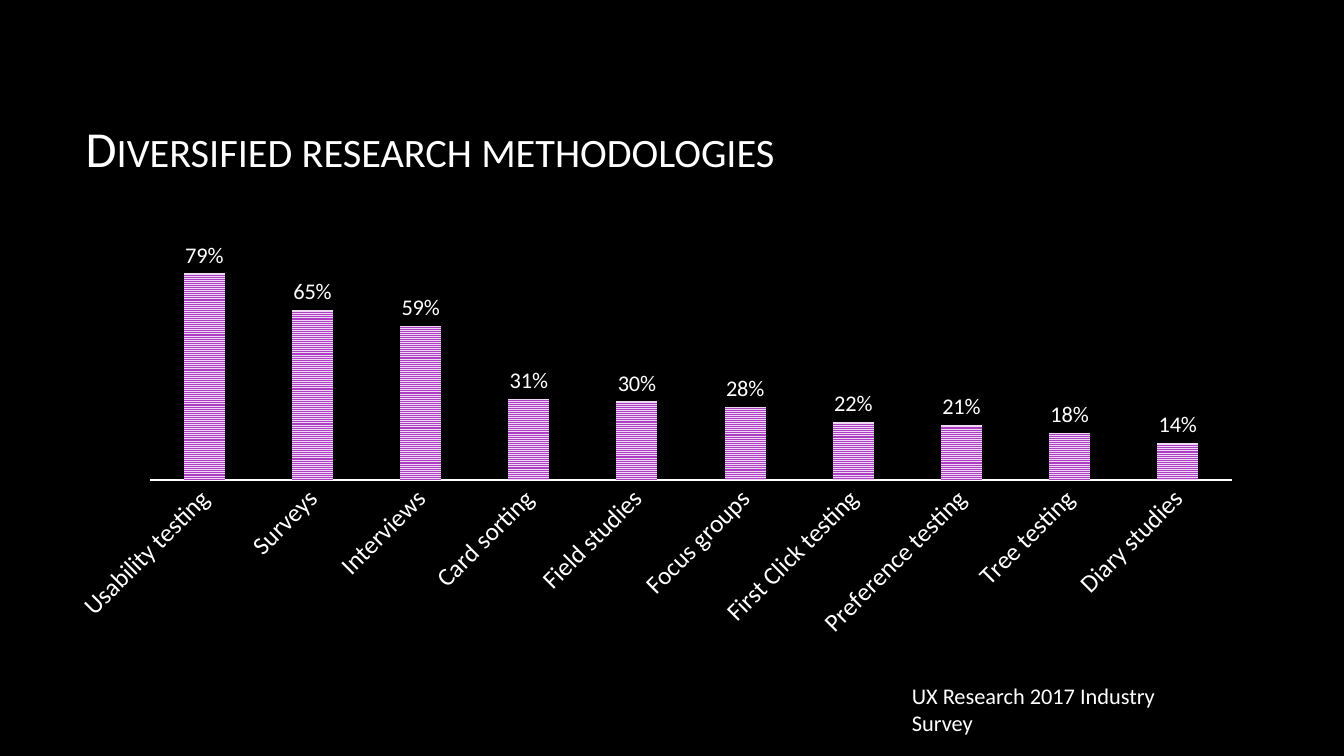
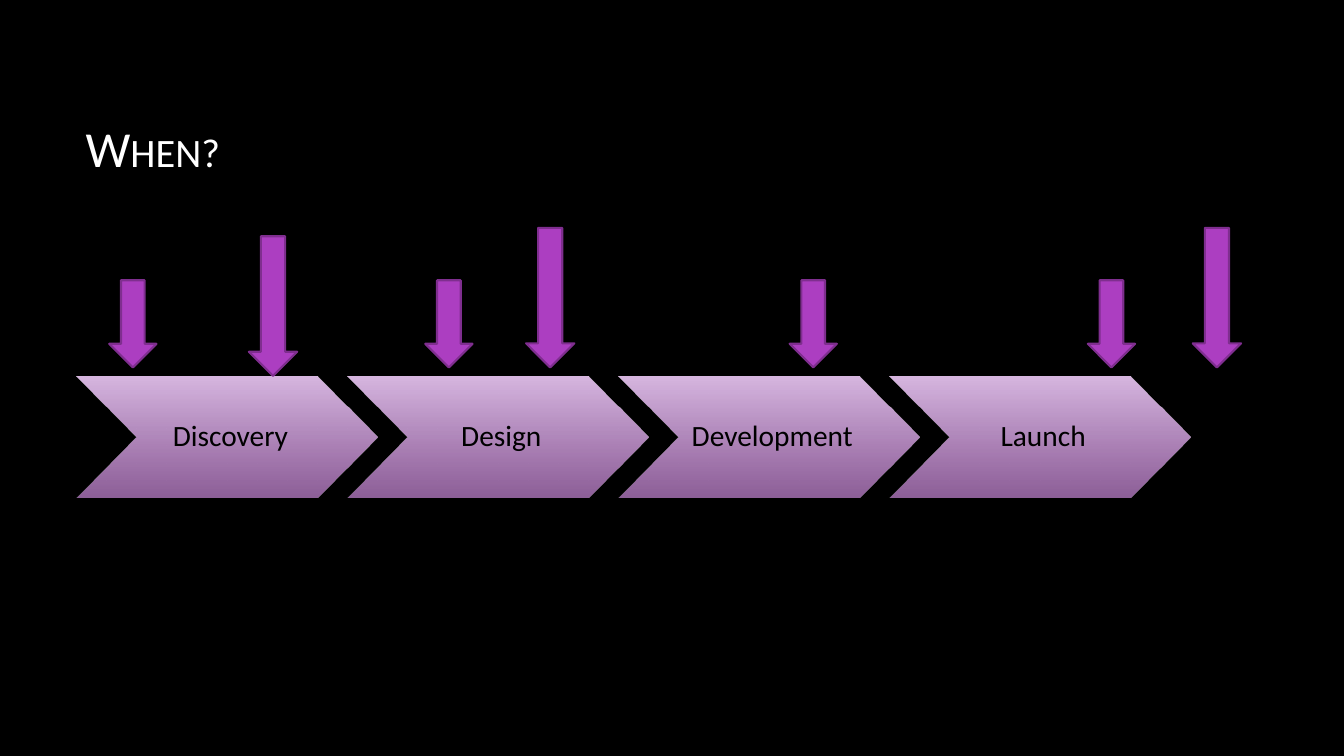
from lxml import etree
from pptx import Presentation, util as u
from pptx.chart.data import CategoryChartData
from pptx.dml.color import RGBColor
from pptx.enum import chart as ch, dml, shapes, text
from pptx.oxml.ns import qn

PX = 9525  # EMU per px: the slide is 1280 x 720 px
BLACK, WHITE = "000000", "FFFFFF"
PURPLE, DARK_PURPLE, PALE_PURPLE = "AC3EC1", "7F2E8F", "EED8F3"
CHEVRON_TOP, CHEVRON_BOTTOM = "D8B7E1", "BF82CE"
FONT = "Calibri"
TITLE_BOX = (72, 64, 1064, 153)

METHODS = {
    "Usability testing": 0.79, "Surveys": 0.65, "Interviews": 0.59,
    "Card sorting": 0.31, "Field studies": 0.3, "Focus groups": 0.28,
    "First Click testing": 0.22, "Preference testing": 0.21,
    "Tree testing": 0.18, "Diary studies": 0.14,
}
PHASES = ["Discovery", "Design", "Development", "Launch"]
SHORT_ARROW, TALL_ARROW = (45, 83), (46, 133)
# left edge, tip height, size
ARROWS = [
    (104, 350, SHORT_ARROW), (405, 350, SHORT_ARROW),
    (1036, 350, SHORT_ARROW), (752, 350, SHORT_ARROW),
    (501, 350, TALL_ARROW), (237, 358, TALL_ARROW), (1136, 350, TALL_ARROW),
]


def px(*lengths):
    return [u.Emu(round(length * PX)) for length in lengths]


def rgb(value):
    return RGBColor.from_string(value)


def assign(target, **values):
    for name, value in values.items():
        setattr(target, name, value)


def style_font(font, size, color=WHITE):
    assign(font, name=FONT, size=u.Pt(size))
    font.color.rgb = rgb(color)


def add_titled_slide(prs, heading):
    slide = prs.slides.add_slide(prs.slide_layouts[5])
    title = slide.shapes.title
    left, top, width, height = px(*TITLE_BOX)
    assign(title, left=left, top=top, width=width, height=height)
    assign(title.text_frame, text=heading, word_wrap=True,
           vertical_anchor=text.MSO_ANCHOR.MIDDLE,
           auto_size=text.MSO_AUTO_SIZE.NONE)
    paragraph = title.text_frame.paragraphs[0]
    paragraph.alignment = text.PP_ALIGN.LEFT
    run = paragraph.runs[0]
    style_font(run.font, 36)
    run._r.get_or_add_rPr().set("cap", "small")
    return slide


def add_methods_chart(slide, box):
    data = CategoryChartData(number_format="0%")
    data.categories = list(METHODS)
    data.add_series("Series 1", list(METHODS.values()))
    chart = slide.shapes.add_chart(
        ch.XL_CHART_TYPE.COLUMN_CLUSTERED, *px(*box), data).chart
    assign(chart, has_title=False, has_legend=False)
    style_font(chart.font, 10)

    assign(chart.value_axis, visible=False, minimum_scale=0, maximum_scale=1,
           has_major_gridlines=False)
    methods = chart.category_axis
    assign(methods, major_tick_mark=ch.XL_TICK_MARK.NONE,
           minor_tick_mark=ch.XL_TICK_MARK.NONE, has_major_gridlines=False)
    style_font(methods.tick_labels.font, 18)
    label_body = methods._element.find(qn("c:txPr")).find(qn("a:bodyPr"))
    label_body.set("rot", "-2700000")
    label_body.set("vert", "horz")
    methods.format.line.color.rgb = rgb(WHITE)
    methods.format.line.width = u.Pt(1.5)

    plot = chart.plots[0]
    assign(plot, gap_width=164, overlap=-22, vary_by_categories=False,
           has_data_labels=True)
    assign(plot.data_labels, show_value=True, number_format="0%",
           number_format_is_linked=False,
           position=ch.XL_LABEL_POSITION.OUTSIDE_END)
    style_font(plot.data_labels.font, 16)
    fill = plot.series[0].format.fill
    fill.patterned()
    fill.pattern = dml.MSO_PATTERN.NARROW_HORIZONTAL
    fill.fore_color.rgb = rgb(PURPLE)
    fill.back_color.rgb = rgb(PALE_PURPLE)


def add_survey_source(slide, box, wording):
    frame = slide.shapes.add_textbox(*px(*box)).text_frame
    assign(frame, text=wording, word_wrap=False,
           auto_size=text.MSO_AUTO_SIZE.SHAPE_TO_FIT_TEXT)
    style_font(frame.paragraphs[0].runs[0].font, 16)


def fill_chevron(chevron):
    """Fade downwards from a solid pale purple to a translucent darker one."""
    chevron.fill.gradient()
    chevron.fill.gradient_angle = 270
    for stop, color in zip(chevron.fill.gradient_stops,
                           (CHEVRON_TOP, CHEVRON_BOTTOM)):
        stop.color.rgb = rgb(color)
    bottom = chevron._element.spPr.findall(".//" + qn("a:srgbClr"))[-1]
    etree.SubElement(bottom, qn("a:alpha")).set("val", "74000")
    chevron.line.fill.background()


def add_phase_chain(slide, box, pitch):
    """Place one chevron per phase; box is the first chevron."""
    left, top, width, height = box
    chain = slide.shapes.add_group_shape()
    for index, phase in enumerate(PHASES):
        chevron = chain.shapes.add_shape(
            shapes.MSO_SHAPE.CHEVRON,
            *px(left + index * pitch, top, width, height))
        chevron.shadow.inherit = False
        fill_chevron(chevron)
        frame = chevron.text_frame
        margin_left, margin = px(9, 3)
        assign(frame, text=phase, word_wrap=True,
               vertical_anchor=text.MSO_ANCHOR.MIDDLE,
               margin_left=margin_left, margin_right=margin,
               margin_top=margin, margin_bottom=margin)
        label = frame.paragraphs[0]
        assign(label, alignment=text.PP_ALIGN.CENTER, line_spacing=0.9)
        style_font(label.runs[0].font, 21, BLACK)


def add_research_arrow(slide, left, tip, size):
    width, height = size
    arrow = slide.shapes.add_shape(
        shapes.MSO_SHAPE.DOWN_ARROW, *px(left, tip - height, width, height))
    arrow.shadow.inherit = False
    arrow.fill.solid()
    arrow.fill.fore_color.rgb = rgb(PURPLE)
    arrow.line.color.rgb = rgb(DARK_PURPLE)
    arrow.line.width = u.Pt(1.5)


def build_methods_slide(prs):
    slide = add_titled_slide(prs, "Diversified research methodologies")
    add_methods_chart(slide, (51, 200, 1145, 416))
    add_survey_source(slide, (859, 645, 310, 35),
                      "UX Research 2017 Industry Survey")


def build_timing_slide(prs):
    slide = add_titled_slide(prs, "When?")
    add_phase_chain(slide, (73, 359, 287, 115), 258)
    for left, tip, size in ARROWS:
        add_research_arrow(slide, left, tip, size)


def main():
    prs = Presentation()
    prs.slide_width, prs.slide_height = px(1280, 720)
    backdrop = prs.slide_master.background.fill
    backdrop.solid()
    backdrop.fore_color.rgb = rgb(BLACK)
    build_methods_slide(prs)
    build_timing_slide(prs)
    prs.save("out.pptx")


if __name__ == "__main__":
    main()
